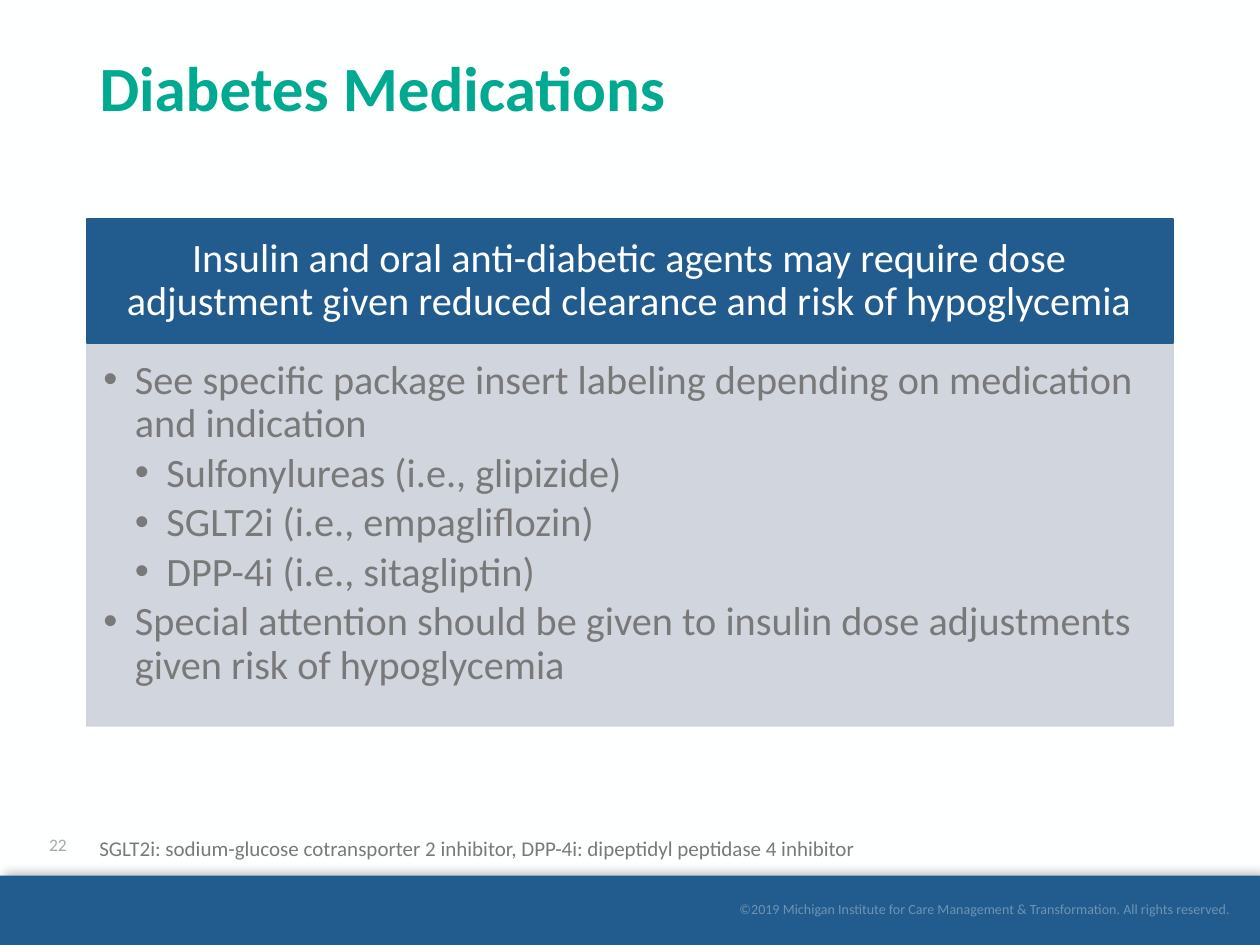
from lxml import etree
from pptx import Presentation
from pptx import util as u
from pptx.dml import color
from pptx.enum import shapes, text
from pptx.oxml import ns

Pt = u.Pt
COLOURS = {
    "paper": "FEFFFF", "navy": "225B8D", "teal": "00AA90",
    "panel": "CDD2DB", "body": "797979", "number": "A8A8A8", "shadow": "000000",
}
LEFT, WIDTH = 49.7, 620.6
FOOTER_TOP, FOOTER_HEIGHT = 500.4, 39.6
ADVICE = "Insulin and oral anti-diabetic agents may require dose adjustment given reduced clearance and risk of hypoglycemia"
POINTS = [
    (0, "See specific package insert labeling depending on medication and indication"),
    (1, "Sulfonylureas (i.e., glipizide)"),
    (1, "SGLT2i (i.e., empagliflozin)"),
    (1, "DPP-4i (i.e., sitagliptin)"),
    (0, "Special attention should be given to insulin dose adjustments given risk of hypoglycemia"),
]
KEY = "SGLT2i: sodium-glucose cotransporter 2 inhibitor, DPP-4i: dipeptidyl peptidase 4 inhibitor"
COPYRIGHT = "©2019 Michigan Institute for Care Management & Transformation. All rights reserved."


def apply(target, values):
    """Set every attribute named in values on target."""
    for name, value in values.items():
        setattr(target, name, value)


def rgb(name):
    """Return the named palette colour."""
    return color.RGBColor.from_string(COLOURS[name])


def add_alpha(parent, percent):
    """Make the solid colours below an element partly transparent."""
    for tint in parent.iter(ns.qn("a:srgbClr")):
        etree.SubElement(tint, ns.qn("a:alpha"), val=str(percent * 1000))


def place(shape, box):
    """Move a shape to a box of left, top, width and height in points."""
    apply(shape, dict(zip(("left", "top", "width", "height"), map(Pt, box))))


def paint(shape, name):
    """Give a shape one colour for its fill and its one-point line."""
    shape.fill.solid()
    shape.fill.fore_color.rgb = rgb(name)
    shape.line.color.rgb = rgb(name)
    shape.line.width = Pt(1)


def set_frame(frame, insets, anchor):
    """Set wrapping, anchor and insets (left, top, right, bottom)."""
    margins = ("margin_left", "margin_top", "margin_right", "margin_bottom")
    apply(frame, dict(zip(margins, map(Pt, insets))))
    apply(frame, {"word_wrap": True, "auto_size": text.MSO_AUTO_SIZE.NONE,
                  "vertical_anchor": anchor})


def write(paragraph, words, size, tint, align=text.PP_ALIGN.LEFT, bold=False, **spacing):
    """Write one formatted run into a paragraph and return it."""
    apply(paragraph, {"alignment": align, **spacing})
    run = paragraph.add_run()
    run.text = words
    apply(run.font, {"name": "Calibri", "size": Pt(size), "bold": bold})
    run.font.color.rgb = rgb(tint)
    return run


def add_label(slide, box, words, size, tint, align=text.PP_ALIGN.LEFT,
              insets=(7.2, 3.6, 7.2, 3.6), anchor=text.MSO_ANCHOR.MIDDLE):
    """Add a text box with one line and return its run."""
    label = slide.shapes.add_textbox(*map(Pt, box))
    set_frame(label.text_frame, insets, anchor)
    return write(label.text_frame.paragraphs[0], words, size, tint, align)


def add_footer(slide, box):
    """Add the footer band with its upward shadow, copyright and page number."""
    left, top, width, height = box
    band = slide.shapes.add_shape(shapes.MSO_SHAPE.RECTANGLE, *map(Pt, box))
    paint(band, "navy")
    band.line.fill.background()
    band.shadow.inherit = False
    effects = band._element.spPr.find(ns.qn("a:effectLst"))
    shadow = etree.SubElement(effects, ns.qn("a:outerShdw"), blurRad=str(Pt(6)),
                              dist=str(Pt(3)), dir=str(315 * 60000), rotWithShape="0")
    etree.SubElement(shadow, ns.qn("a:srgbClr"), val=COLOURS["shadow"])
    add_alpha(shadow, 25)
    notice = add_label(slide, (left + 356.4, top + 9.4, 347, 19.4), COPYRIGHT, 8, "paper",
                       text.PP_ALIGN.RIGHT, (7.2, 3.6, 0, 3.6))
    add_alpha(notice._r, 35)
    add_label(slide, (left + 18, top - 32.4, 30.2, 28.8), "22", 10, "number",
              text.PP_ALIGN.CENTER, (0, 3.6, 0, 3.6))


def add_title(slide, box):
    """Fill the title placeholder."""
    title = slide.shapes.title
    place(title, box)
    set_frame(title.text_frame, (7.2, 3.6, 7.2, 3.6), text.MSO_ANCHOR.TOP)
    write(title.text_frame.paragraphs[0], "Diabetes Medications", 36, "teal",
          bold=True, line_spacing=0.9)


def add_advice(slide, box, heading_height=70.6):
    """Add the heading bar and the bulleted panel below it."""
    left, top, width, height = box
    heading = slide.shapes.add_shape(
        shapes.MSO_SHAPE.RECTANGLE, *map(Pt, (left, top, width, heading_height)))
    paint(heading, "navy")
    heading.shadow.inherit = False
    set_frame(heading.text_frame, (13, 7.2, 13, 7.2), text.MSO_ANCHOR.MIDDLE)
    write(heading.text_frame.paragraphs[0], ADVICE, 23, "paper",
          text.PP_ALIGN.CENTER, line_spacing=0.9)

    panel = slide.placeholders[1]
    place(panel, (left, top + heading_height, width, height - heading_height))
    paint(panel, "panel")
    add_alpha(panel._element.spPr, 90)
    frame = panel.text_frame
    set_frame(frame, (9.4, 9.4, 13, 14.4), text.MSO_ANCHOR.TOP)
    for index, (level, words) in enumerate(POINTS):
        point = frame.add_paragraph() if index else frame.paragraphs[0]
        properties = point._p.get_or_add_pPr()
        apply_indent = {"marL": Pt(18 * (level + 1)), "indent": Pt(-18)}
        for name, value in apply_indent.items():
            properties.set(name, str(value))
        etree.SubElement(properties, ns.qn("a:buChar"), char="•")
        write(point, words, 23, "body", level=level, line_spacing=0.9,
              space_before=Pt(0), space_after=Pt(3.45))


def main():
    """Build and save the slide."""
    deck = Presentation()
    apply(deck, {"slide_width": Pt(720), "slide_height": Pt(540)})
    slide = deck.slides.add_slide(deck.slide_layouts[1])
    slide.background.fill.solid()
    slide.background.fill.fore_color.rgb = rgb("paper")
    add_footer(slide, (0, FOOTER_TOP, 720, FOOTER_HEIGHT))
    add_title(slide, (LEFT, 28.8, WIDTH, 104.4))
    add_advice(slide, (LEFT, 125.3, WIDTH, 289.5))
    add_label(slide, (LEFT, 473.8, 486, 21.6), KEY, 12, "body",
              anchor=text.MSO_ANCHOR.TOP)
    deck.save("out.pptx")


if __name__ == "__main__":
    main()
